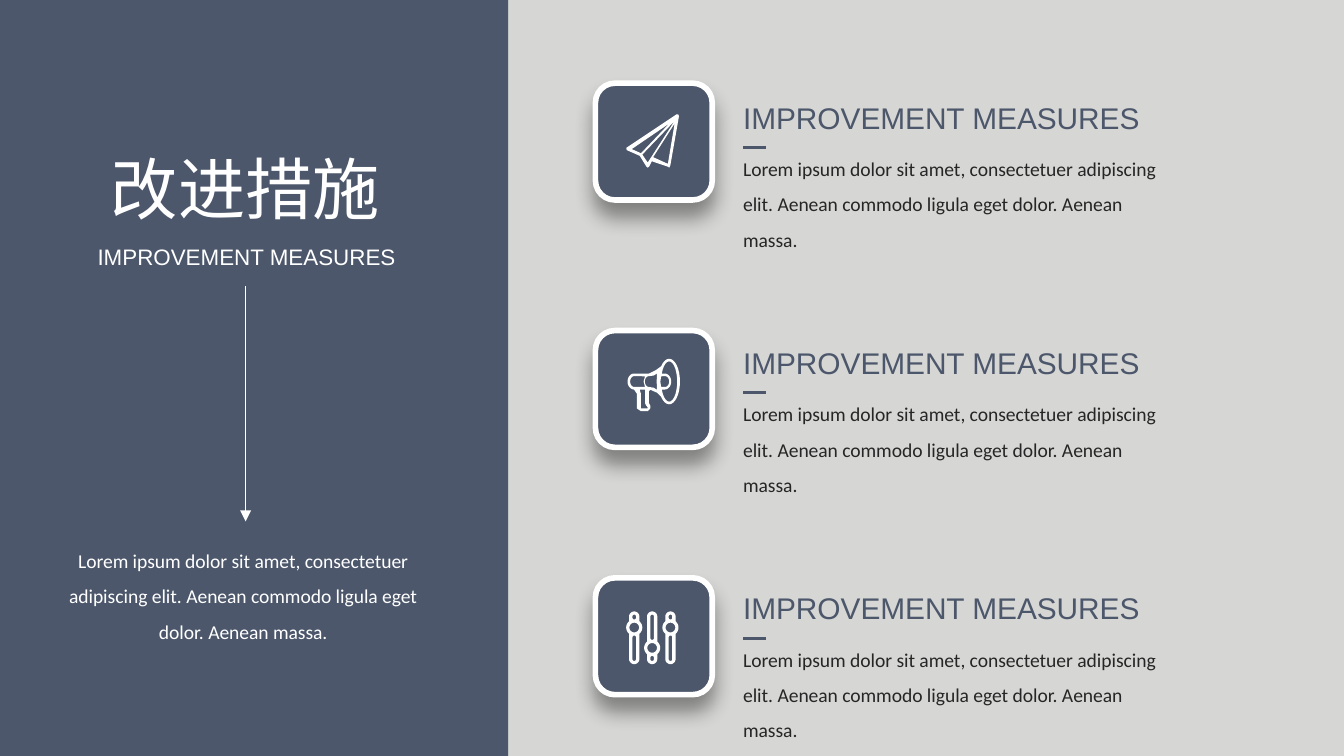
"""Build the improvement measures slide: a dark side panel and three icon rows."""
from dataclasses import dataclass
from math import acos, cos, degrees, radians, sin

from lxml.etree import SubElement
from pptx import Presentation
from pptx.dml.color import RGBColor
from pptx.enum.shapes import MSO_CONNECTOR as Connector, MSO_SHAPE as Shape
from pptx.enum.text import MSO_AUTO_SIZE as AutoSize, PP_ALIGN as Align
from pptx.oxml.ns import qn
from pptx.util import Pt

Point = tuple[float, float]
Contour = list[Point]

SLATE, WHITE, GREY, INK = "4C576B", "FFFFFF", "D6D6D4", "262626"
HEADING = "IMPROVEMENT MEASURES"
LOREM = ("Lorem ipsum dolor sit amet, consectetuer adipiscing elit. "
         "Aenean commodo ligula eget dolor. Aenean massa.")
TILE_TOP, TILE_STEP = 44.6, 132.5
TEXT_TOP, TEXT_STEP = 49.7, 131.4


@dataclass(frozen=True)
class Label:
    text: str
    left: float
    top: float
    width: float
    height: float
    size: float
    color: str
    font: str = "Arial"
    align: Align = Align.LEFT
    spacing: float = 1.0
    wrap: bool = True


@dataclass(frozen=True)
class Icon:
    left: float
    top: float
    contours: list[Contour]


def rgb(color: str) -> RGBColor:
    return RGBColor.from_string(color)


def arc(x: float, y: float, rx: float, ry: float, start: float, end: float) -> Contour:
    angles = [radians(start + (end - start) * step / 24) for step in range(25)]
    return [(x + rx * cos(angle), y + ry * sin(angle)) for angle in angles]


def slot(x: float, top: float, bottom: float) -> Contour:
    radius = 0.95
    return (arc(x, top + radius, radius, radius, 180, 360)
            + arc(x, bottom - radius, radius, radius, 0, 180))


def slider(x: float, knob: float) -> list[Contour]:
    height, half, radius = 28.2, 2.75, 4.3
    join = degrees(acos(half / radius))
    outline = (arc(x, half, half, half, 180, 360)
               + arc(x, knob, radius, radius, -join, join)
               + arc(x, height - half, half, half, 0, 180)
               + arc(x, knob, radius, radius, 180 - join, 180 + join))
    return [outline, arc(x, knob, 2.6, 2.6, 0, 360),
            slot(x, 1.7, knob - radius), slot(x, knob + radius, height - 1.7)]


PLANE = Icon(335.5, 61.2, [
    [(28, 0.2), (27, 0), (0, 18), (0.2, 19.2), (7.2, 22.3), (10.8, 28.1), (11.5, 28.6),
     (12.2, 28.1), (13.7, 25.2), (22.3, 28.1), (23, 28.6), (23.6, 27.5), (28.2, 1.2)],
    [(22.3, 26.6), (14.4, 23), (25.9, 5)],
    [(8.6, 21.6), (25.9, 3.6), (11.5, 25.9)],
    [(2.9, 18.7), (23, 5), (7.9, 20.9)],
])
MEGAPHONE = Icon(336.2, 192.2, [
    arc(22.3, 12.2, 5.8, 12.2, 222, 498)
    + [(15.8, 18.2), (12.2, 16.6), (11.5, 17.3), (11.5, 23.8), (12.2, 25.2), (12.2, 26.6),
       (10.8, 28.1), (7.2, 28.1), (5, 26.6), (5, 18.7), (3.6, 16.6)]
    + arc(3.6, 12.2, 3.6, 4.3, 90, 270) + [(11.5, 7.9), (15, 6.2)],
    arc(22.3, 12.2, 4.3, 10.8, 203.5, 516.5) + arc(19.8, 12.2, 3.6, 4.3, 90, -90),
    arc(11.5, 12.2, 2.2, 2.9, 90, 270)
    + [(14, 9), (15.8, 7.9), (15.6, 12.2), (15.8, 16.6), (14, 15.5)],
    [(10.8, 26.6), (7.2, 26.6), (7.2, 18.7), (6.5, 16.6), (9.4, 16.6), (9.4, 23.8),
     (10.1, 25.2), (10.8, 26)],
    arc(3.6, 12.2, 2.2, 2.9, 90, 270) + [(9.4, 9.4), (8.6, 12.2), (9.4, 15.1)],
    [(17.6, 12.2), (18, 9.4)] + arc(20.1, 12.2, 2.2, 2.9, -90, 90) + [(18, 15.1)],
])
SLIDERS = Icon(335.5, 327.6, slider(4.3, 8.6) + slider(13.9, 19.5) + slider(23.7, 8.6))


def add_label(page, label: Label) -> None:
    box = page.shapes.add_textbox(
        Pt(label.left), Pt(label.top), Pt(label.width), Pt(label.height))
    frame = box.text_frame
    frame.word_wrap = label.wrap
    frame.auto_size = AutoSize.SHAPE_TO_FIT_TEXT
    para = frame.paragraphs[0]
    para.alignment = label.align
    para.line_spacing = label.spacing
    span = para.add_run()
    span.text = label.text
    span.font.name = label.font
    span.font.size = Pt(label.size)
    span.font.color.rgb = rgb(label.color)


def add_line(page, start: Point, end: Point, color: str, width: float, arrow: bool = False) -> None:
    line = page.shapes.add_connector(Connector.STRAIGHT, *map(Pt, start + end))
    line.line.color.rgb = rgb(color)
    line.line.width = Pt(width)
    if arrow:
        SubElement(line.line._get_or_add_ln(), qn("a:tailEnd"), type="triangle")
    SubElement(line._element.spPr, qn("a:effectLst"))


def add_panel(page, width: float, height: float) -> None:
    panel = page.shapes.add_shape(Shape.RECTANGLE, Pt(0), Pt(0), Pt(width), Pt(height))
    panel.shadow.inherit = False
    panel.fill.solid()
    panel.fill.fore_color.rgb = rgb(SLATE)
    panel.line.fill.background()


def add_tile(page, left: float, top: float, side: float) -> None:
    tile = page.shapes.add_shape(Shape.ROUNDED_RECTANGLE, Pt(left), Pt(top), Pt(side), Pt(side))
    tile.fill.solid()
    tile.fill.fore_color.rgb = rgb(SLATE)
    tile.line.color.rgb = rgb(WHITE)
    tile.line.width = Pt(3)
    effects = SubElement(tile._element.spPr, qn("a:effectLst"))
    shadow = SubElement(effects, qn("a:outerShdw"), blurRad=str(Pt(11)), dist=str(Pt(8)),
                        dir="5400000", algn="t", rotWithShape="0")
    tint = SubElement(shadow, qn("a:srgbClr"), val="000000")
    SubElement(tint, qn("a:alpha"), val="40000")


def add_icon(page, icon: Icon) -> None:
    contours = [[(Pt(icon.left + x), Pt(icon.top + y)) for x, y in contour]
                for contour in icon.contours]
    builder = page.shapes.build_freeform(*contours[0][0])
    for index, contour in enumerate(contours):
        if index:
            builder.move_to(*contour[0])
        builder.add_line_segments(contour[1:], close=True)
    drawing = builder.convert_to_shape()
    drawing.shadow.inherit = False
    drawing.fill.solid()
    drawing.fill.fore_color.rgb = rgb(WHITE)
    drawing.line.fill.background()


def add_measure(page, row: int, icon: Icon) -> None:
    add_tile(page, 319, TILE_TOP + row * TILE_STEP, 62.6)
    add_icon(page, icon)
    top = TEXT_TOP + row * TEXT_STEP
    add_label(page, Label(LOREM, 391, top + 24.6, 245.5, 64.8, 10.5, INK, "Calibri", spacing=1.5))
    add_label(page, Label(HEADING, 391, top, 229.7, 26.6, 16, SLATE, wrap=False))
    add_line(page, (398.2, top + 29.4), (410.4, top + 29.4), SLATE, 1.5)


def main() -> None:
    deck = Presentation()
    deck.slide_width, deck.slide_height = Pt(720), Pt(405)
    page = deck.slides.add_slide(deck.slide_layouts[6])
    page.background.fill.solid()
    page.background.fill.fore_color.rgb = rgb(GREY)
    add_panel(page, 272.2, 405)
    add_label(page, Label(HEADING, 6.5, 126.7, 251.3, 21.6, 12, WHITE, align=Align.CENTER))
    add_label(page, Label("改进措施", 46.8, 75.6, 169.2, 51.1, 36, WHITE, align=Align.CENTER))
    add_line(page, (131.6, 153.4), (131.6, 279.4), WHITE, 0.5, arrow=True)
    add_label(page, Label(LOREM, 25.2, 284.4, 210.2, 64.8, 10.5, WHITE, "Calibri",
                          Align.CENTER, 1.5))
    for row, icon in enumerate((PLANE, MEGAPHONE, SLIDERS)):
        add_measure(page, row, icon)
    deck.save("out.pptx")


if __name__ == "__main__":
    main()
